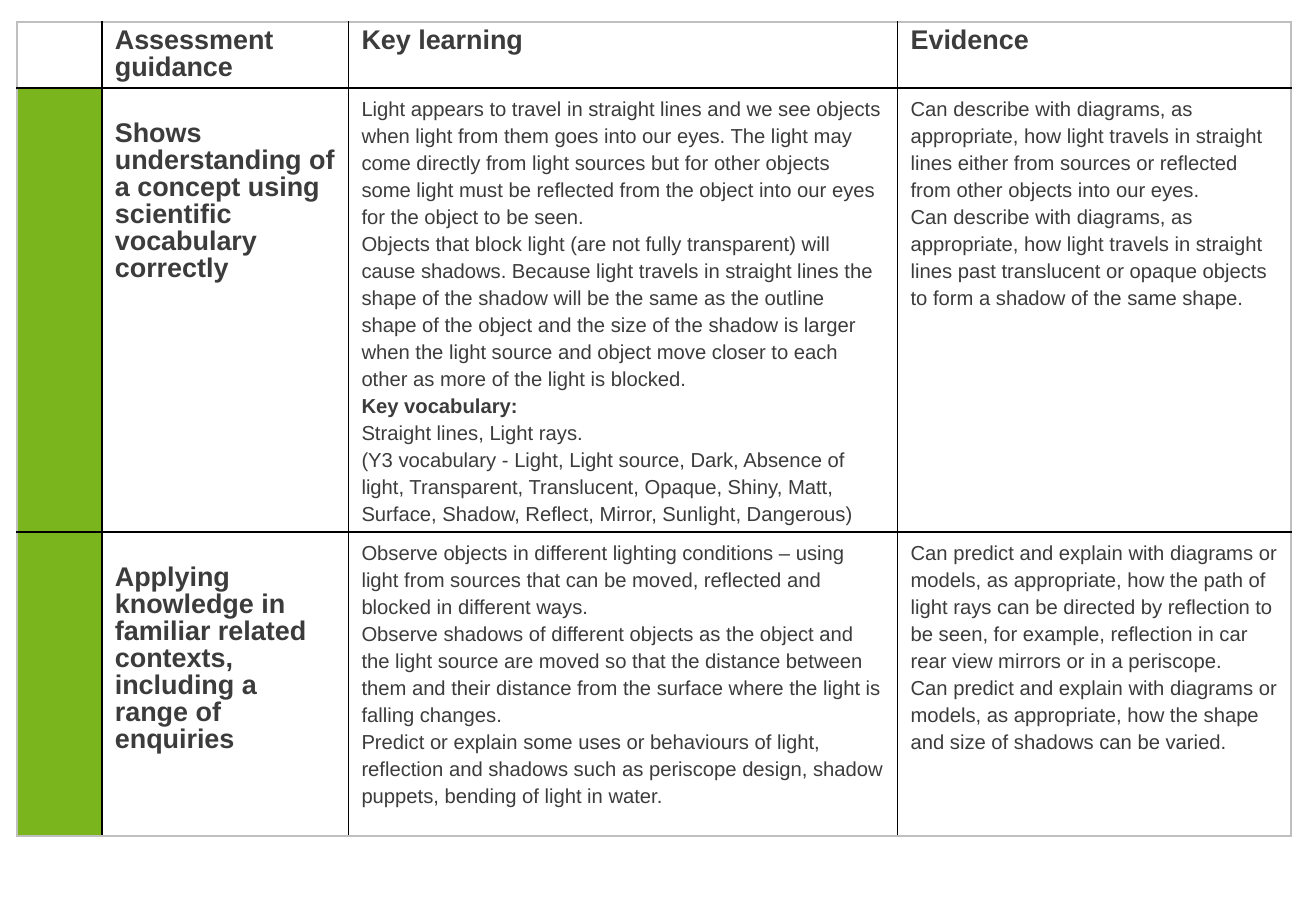
from lxml import etree
from pptx import Presentation
from pptx.dml.color import RGBColor
from pptx.oxml.ns import qn
from pptx.util import Pt

COLOURS = {"text": "3C3C3C", "band": "7AB51D", "inner": "000000", "outer": "BFBFBF"}
COLUMN_WIDTHS = [50.4, 146.2, 325.5, 233.2]
ROW_HEIGHTS = [39.2, 263.2, 180.2]
LINE_HEIGHT = 16
SUBHEADING = "Key vocabulary:"

# Each row: guidance, key learning, evidence; each cell is a list of paragraphs.
ROWS = [
    [["Assessment guidance"], ["Key learning"], ["Evidence"]],
    [
        ["Shows understanding of a concept using scientific vocabulary correctly"],
        [
            "Light appears to travel in straight lines and we see objects when light "
            "from them goes into our eyes. The light may come directly from light "
            "sources but for other objects some light must be reflected from the "
            "object into our eyes for the object to be seen.",
            "Objects that block light (are not fully transparent) will cause shadows. "
            "Because light travels in straight lines the shape of the shadow will be "
            "the same as the outline shape of the object and the size of the shadow "
            "is larger when the light source and object move closer to each other as "
            "more of the light is blocked.",
            SUBHEADING,
            "Straight lines, Light rays.",
            "(Y3 vocabulary - Light, Light source, Dark, Absence of light, "
            "Transparent, Translucent, Opaque, Shiny, Matt, Surface, Shadow, "
            "Reflect, Mirror, Sunlight, Dangerous)",
        ],
        [
            "Can describe with diagrams, as appropriate, how light travels in "
            "straight lines either from sources or reflected from other objects "
            "into our eyes.",
            "Can describe with diagrams, as appropriate, how light travels in "
            "straight lines past translucent or opaque objects to form a shadow "
            "of the same shape.",
        ],
    ],
    [
        ["Applying knowledge in familiar related contexts, including a range of enquiries"],
        [
            "Observe objects in different lighting conditions – using light from "
            "sources that can be moved, reflected and blocked in different ways.",
            "Observe shadows of different objects as the object and the light source "
            "are moved so that the distance between them and their distance from the "
            "surface where the light is falling changes.",
            "Predict or explain some uses or behaviours of light, reflection and "
            "shadows such as periscope design, shadow puppets, bending of light in "
            "water.",
        ],
        [
            "Can predict and explain with diagrams or models, as appropriate, how the "
            "path of light rays can be directed by reflection to be seen, for example, "
            "reflection in car rear view mirrors or in a periscope.",
            "Can predict and explain with diagrams or models, as appropriate, how the "
            "shape and size of shadows can be varied.",
        ],
    ],
]


def add_border(cell, side, colour):
    """Draw a 1 pt line on one side (L, R, T or B) of a cell."""
    line = etree.SubElement(cell._tc.get_or_add_tcPr(), qn(f"a:ln{side}"), w=str(Pt(1)))
    fill = etree.SubElement(line, qn("a:solidFill"))
    etree.SubElement(fill, qn("a:srgbClr"), val=colour)


prs = Presentation()
prs.slide_width, prs.slide_height = Pt(780), Pt(540)
slide = prs.slides.add_slide(prs.slide_layouts[6])

assessment = slide.shapes.add_table(
    len(ROW_HEIGHTS), len(COLUMN_WIDTHS),
    Pt(10), Pt(13), Pt(sum(COLUMN_WIDTHS)), Pt(sum(ROW_HEIGHTS)),
).table
assessment.first_row = assessment.horz_banding = False
for column, width in zip(assessment.columns, COLUMN_WIDTHS):
    column.width = Pt(width)
for row, height in zip(assessment.rows, ROW_HEIGHTS):
    row.height = Pt(height)

last_row, last_column = len(ROW_HEIGHTS) - 1, len(COLUMN_WIDTHS) - 1
for r, row in enumerate(assessment.rows):
    for c, cell in enumerate(row.cells):
        on_edge = {"L": c == 0, "R": c == last_column, "T": r == 0, "B": r == last_row}
        for side, outer in on_edge.items():
            add_border(cell, side, COLOURS["outer" if outer else "inner"])
        if c == 0 and r > 0:
            cell.fill.solid()
            cell.fill.fore_color.rgb = RGBColor.from_string(COLOURS["band"])
        else:
            cell.fill.background()
        if c == 0:
            continue

        heading = r == 0 or c == 1
        cell.margin_left = cell.margin_right = Pt(7.7)
        cell.margin_bottom = Pt(3.6)
        # Row headings start one line lower than the text beside them.
        cell.margin_top = Pt(3.6 + (LINE_HEIGHT if r > 0 and c == 1 else 0))
        cell.text_frame.text = "\n".join(ROWS[r][c - 1])
        for paragraph in cell.text_frame.paragraphs:
            paragraph.line_spacing = Pt(LINE_HEIGHT)
            font = paragraph.runs[0].font
            font.name = "Arial"
            font.size = Pt(16 if heading else 12)
            font.bold = heading or paragraph.text == SUBHEADING
            font.color.rgb = RGBColor.from_string(COLOURS["text"])

prs.save("out.pptx")
